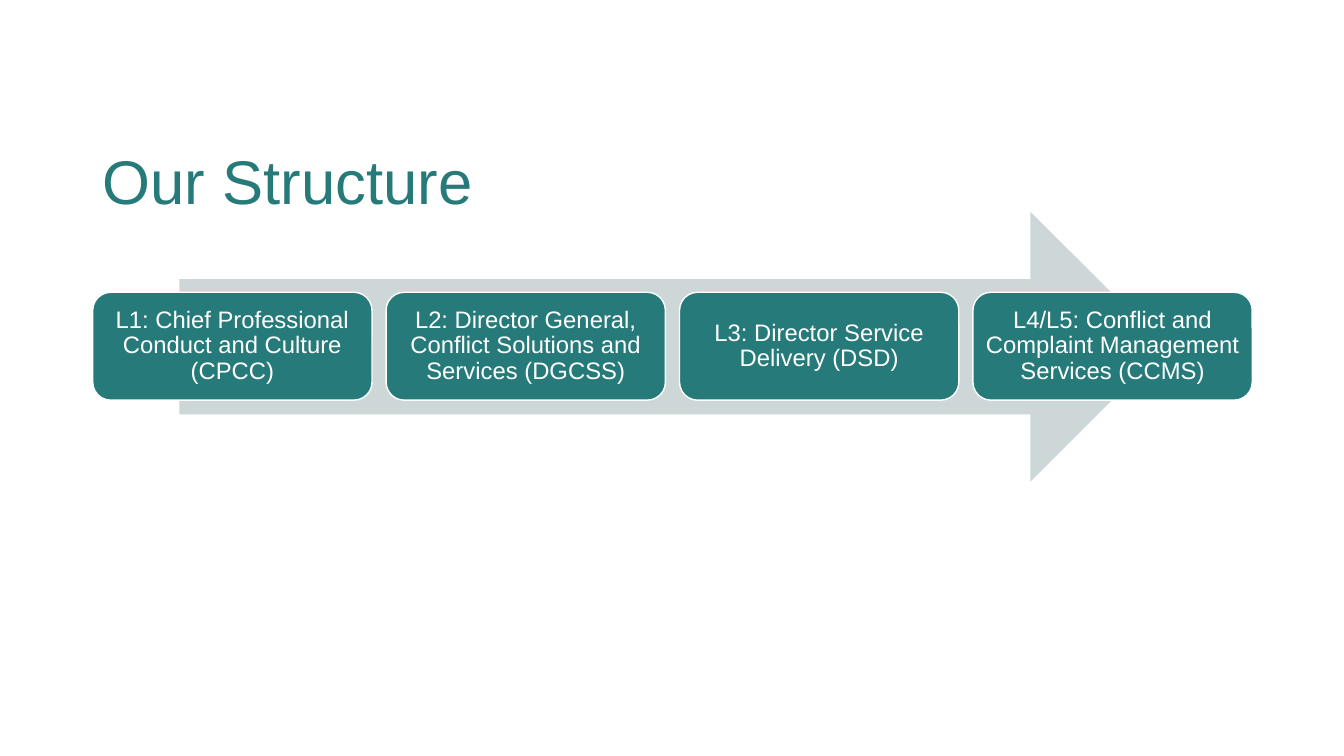
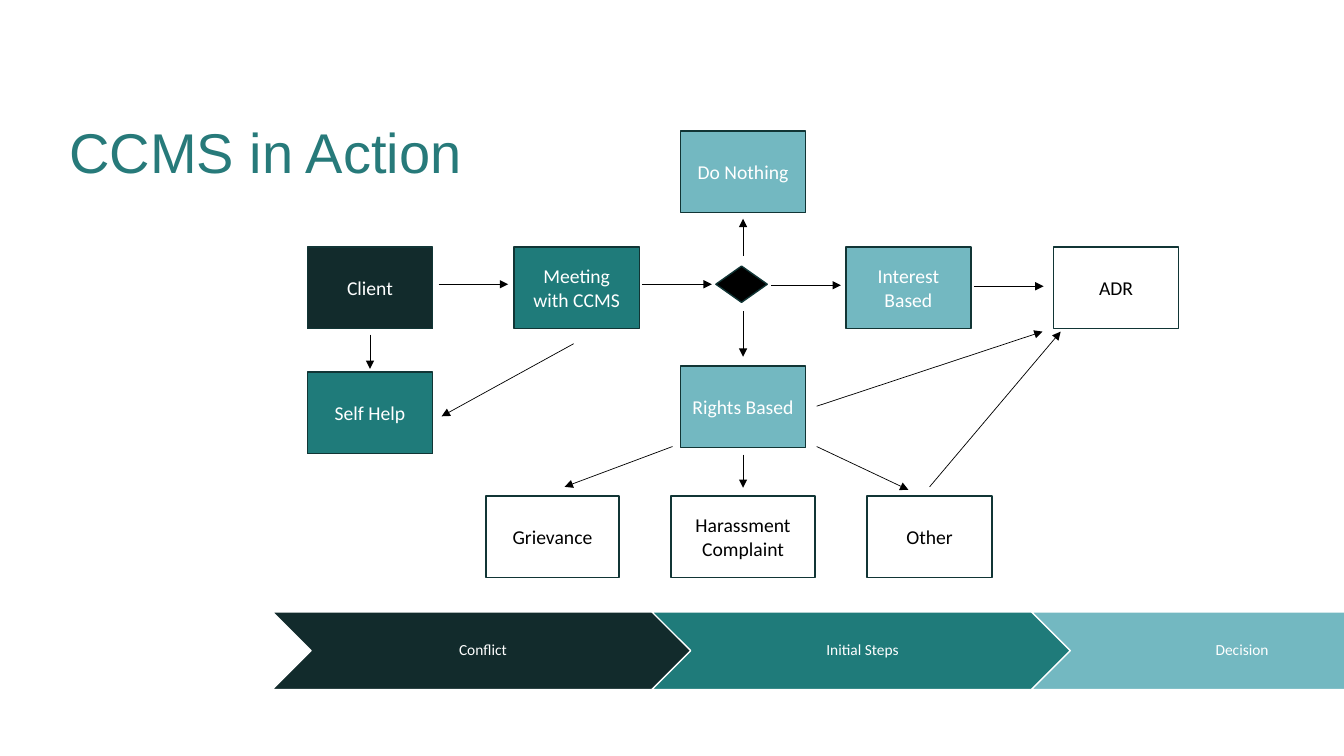
from lxml.etree import SubElement
from pptx import Presentation
from pptx.dml.color import RGBColor
from pptx.enum.shapes import MSO_CONNECTOR, MSO_SHAPE as SHAPE
from pptx.enum.text import MSO_ANCHOR, MSO_AUTO_SIZE, PP_ALIGN
from pptx.oxml.ns import qn
from pptx.util import Inches, Pt

COLOURS = {
    "title": "277A7A", "band": "CDD7D7", "white": "FFFFFF", "black": "000000",
    "outline": "113535", "dark": "122B2C", "teal": "1F7B7A", "light": "73B8C1",
}
TITLE_LAYOUT = 5

# Structure slide: equal cards across the content width
MARGIN, CONTENT_WIDTH = 0.92, 11.5
CARD_WIDTH, CARD_HEIGHT, CARD_TOP = 2.77, 1.07, 2.9
LEVELS = [
    "L1: Chief Professional Conduct and Culture (CPCC)",
    "L2: Director General, Conflict Solutions and Services (DGCSS)",
    "L3: Director Service Delivery (DSD)",
    "L4/L5: Conflict and Complaint Management Services (CCMS)",
]

# Flow slide: column centres and row tops
COLUMNS = {"client": 3.67, "meeting": 5.72, "choice": 7.37, "interest": 9.01,
           "adr": 11.07, "grievance": 5.48, "other": 9.22}
ROWS = {"nothing": 1.3, "main": 2.45, "rights": 3.63, "help": 3.69, "outcome": 4.92}
BOX_WIDTH, BOX_HEIGHT = 1.24, 0.81
STEPS = [  # text, column, row, fill, width
    ("Do Nothing", "choice", "nothing", "light", BOX_WIDTH),
    ("Client", "client", "main", "dark", BOX_WIDTH),
    ("Meeting with CCMS", "meeting", "main", "teal", BOX_WIDTH),
    ("Interest Based", "interest", "main", "light", BOX_WIDTH),
    ("ADR", "adr", "main", None, BOX_WIDTH),
    ("Self Help", "client", "help", "teal", BOX_WIDTH),
    ("Rights Based", "choice", "rights", "light", BOX_WIDTH),
    ("Grievance", "grievance", "outcome", "white", 1.32),
    ("Harassment Complaint", "choice", "outcome", None, 1.43),
    ("Other", "other", "outcome", None, BOX_WIDTH),
]
ARROW_LENGTH = 0.69
ACROSS = [(4.35, 2.82), (6.37, 2.82), (7.65, 2.83), (9.66, 2.84)]
DOWN = [("client", 3.32, 3.66), ("choice", 3.09, 3.54),
        ("choice", 4.51, 4.84), ("choice", 2.54, 2.17)]
SLANTED = [
    (5.69, 3.41, 4.38, 4.13),   # meeting to self help
    (9.22, 4.83, 10.52, 3.29),  # other to ADR
    (8.1, 4.03, 10.34, 3.29),   # rights based to ADR
    (6.67, 4.43, 5.6, 4.83),    # rights based to grievance
    (8.1, 4.43, 9.01, 4.86),    # rights based to other
]

# Phase band under the flow
PHASES = [("Conflict", "dark"), ("Initial Steps", "teal"), ("Decision", "light")]
PHASE_LEFT, PHASE_TOP, PHASE_STEP = 2.7, 6.07, 3.765
PHASE_WIDTH, PHASE_HEIGHT = 4.18, 0.77


def colour(name):
    return RGBColor.from_string(COLOURS[name])


def style_text(frame, text, font, size, text_colour, align, spacing=1):
    frame.text = text
    frame.word_wrap = True
    frame.auto_size = MSO_AUTO_SIZE.NONE
    frame.vertical_anchor = MSO_ANCHOR.MIDDLE
    para = frame.paragraphs[0]
    para.alignment = align
    para.line_spacing = spacing
    for span in para.runs:
        span.font.name = font
        span.font.size = Pt(size)
        span.font.color.rgb = colour(text_colour)


def add_page(deck, title, size, left, top, width):
    page = deck.slides.add_slide(deck.slide_layouts[TITLE_LAYOUT])
    box = page.shapes.title
    box.left, box.top, box.width, box.height = map(Inches, (left, top, width, 1.45))
    style_text(box.text_frame, title, "Arial", size, "title", PP_ALIGN.LEFT, 0.9)
    return page


def add_block(page, kind, area, fill, line=None):
    block = page.shapes.add_shape(kind, *map(Inches, area))
    block.shadow.inherit = False
    if fill:
        block.fill.solid()
        block.fill.fore_color.rgb = colour(fill)
    else:
        block.fill.background()
    if line:
        block.line.color.rgb = colour(line)
        block.line.width = Pt(1)
    else:
        block.line.fill.background()
    return block


def set_insets(frame, side, edge):
    frame.margin_left = frame.margin_right = Inches(side)
    frame.margin_top = frame.margin_bottom = Inches(edge)


def add_arrow(page, *ends):
    arrow = page.shapes.add_connector(MSO_CONNECTOR.STRAIGHT, *map(Inches, ends))
    arrow.line.color.rgb = colour("black")
    arrow.line.width = Pt(0.5)
    SubElement(arrow.line._get_or_add_ln(), qn("a:tailEnd"), type="triangle")
    SubElement(arrow._element.spPr, qn("a:effectLst"))


def add_card(page, index, text):
    step = (CONTENT_WIDTH - CARD_WIDTH) / (len(LEVELS) - 1)
    area = (MARGIN + index * step, CARD_TOP, CARD_WIDTH, CARD_HEIGHT)
    card = add_block(page, SHAPE.ROUNDED_RECTANGLE, area, "title", "white")
    set_insets(card.text_frame, 0.07, 0.07)
    style_text(card.text_frame, text, "Arial", 17, "white", PP_ALIGN.CENTER, 0.9)


def add_step(page, text, column, row, fill, width):
    area = (COLUMNS[column] - width / 2, ROWS[row], width, BOX_HEIGHT)
    box = add_block(page, SHAPE.FLOWCHART_PROCESS, area, fill, "outline")
    text_colour = "black" if fill in (None, "white") else "white"
    style_text(box.text_frame, text, "Calibri", 14, text_colour, PP_ALIGN.CENTER)


def add_phase(page, index, text, fill):
    area = (PHASE_LEFT + index * PHASE_STEP, PHASE_TOP, PHASE_WIDTH, PHASE_HEIGHT)
    phase = add_block(page, SHAPE.CHEVRON, area, fill, "white")
    set_insets(phase.text_frame, 0.02, 0.02)
    style_text(phase.text_frame, text, "Calibri", 11, "white", PP_ALIGN.CENTER, 0.9)


def build_structure(deck):
    page = add_page(deck, "Our Structure", 44, MARGIN, 1.11, CONTENT_WIDTH)
    add_block(page, SHAPE.RIGHT_ARROW, (1.78, 2.1, 9.78, 2.68), "band")
    for index, text in enumerate(LEVELS):
        add_card(page, index, text)


def build_flow(deck):
    page = add_page(deck, "CCMS in Action", 40, 0.59, 0.82, 8.62)
    for step in STEPS:
        add_step(page, *step)
    for index, (text, fill) in enumerate(PHASES):
        add_phase(page, index, text, fill)
    add_block(page, SHAPE.DIAMOND, (7.1, 2.64, 0.51, 0.36), "black", "outline")
    for left, top in ACROSS:
        add_arrow(page, left, top, left + ARROW_LENGTH, top)
    for column, start, end in DOWN:
        add_arrow(page, COLUMNS[column], start, COLUMNS[column], end)
    for ends in SLANTED:
        add_arrow(page, *ends)


def main():
    deck = Presentation()
    deck.slide_width, deck.slide_height = Inches(13.33), Inches(7.5)
    build_structure(deck)
    build_flow(deck)
    deck.save("out.pptx")


if __name__ == "__main__":
    main()
